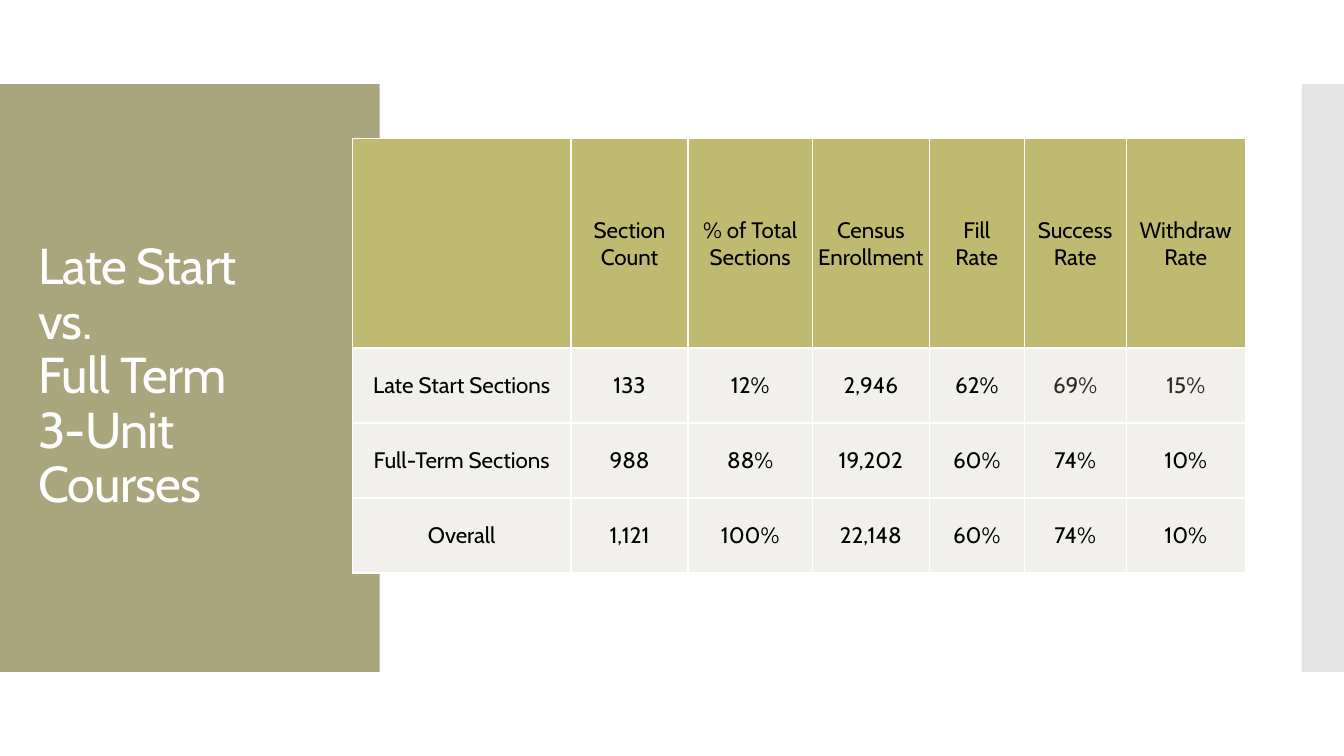
from lxml import etree
from pptx import Presentation
from pptx.dml.color import RGBColor
from pptx.enum.shapes import MSO_SHAPE
from pptx.enum.text import MSO_ANCHOR, MSO_AUTO_SIZE, PP_ALIGN
from pptx.oxml.ns import qn
from pptx.util import Cm, Pt

RECTANGLE = MSO_SHAPE.RECTANGLE
MIDDLE = MSO_ANCHOR.MIDDLE
NO_AUTOFIT = MSO_AUTO_SIZE.NONE
LEFT, CENTER = PP_ALIGN.LEFT, PP_ALIGN.CENTER

FONT = "Cabin"
COLORS = {
    "panel": "A9A57C",
    "strip": "C8C8C8",
    "header": "C0BA71",
    "body": "F1F0EC",
    "white": "FFFFFF",
    "text": "000000",
    "late_rate": "2F2B20",
}
TITLE = "Late Start\vvs.\vFull Term\v3-Unit Courses"
ROWS = [
    ["", "Section Count", "% of Total Sections", "Census\nEnrollment",
     "Fill\nRate", "Success\nRate", "Withdraw Rate"],
    ["Late Start Sections", "133", "12%", "2,946", "62%", "69%", "15%"],
    ["Full-Term Sections", "988", "88%", "19,202", "60%", "74%", "10%"],
    ["Overall", "1,121", "100%", "22,148", "60%", "74%", "10%"],
]
COLUMN_WIDTHS = [5.51, 2.95, 3.13, 2.95, 2.39, 2.57, 3.0]
HEADER_HEIGHT, ROW_HEIGHT = 5.28, 1.89
LATE_RATE_CELLS = {(1, 5), (1, 6)}


def rgb(name):
    return RGBColor.from_string(COLORS[name])


def format_paragraph(paragraph, size, color, alignment):
    paragraph.alignment = alignment
    paragraph.font.name = FONT
    paragraph.font.size = Pt(size)
    paragraph.font.color.rgb = rgb(color)


def add_panel(slide, left, width, color, opacity=100):
    panel = slide.shapes.add_shape(
        RECTANGLE, Cm(left), Cm(2.12), Cm(width), Cm(14.81))
    panel.shadow.inherit = False
    panel.line.fill.background()
    panel.fill.solid()
    panel.fill.fore_color.rgb = rgb(color)
    if opacity < 100:
        fill_color = panel.element.spPr.find(qn("a:solidFill"))[0]
        etree.SubElement(fill_color, qn("a:alpha"), val=str(opacity * 1000))
    slide.shapes.title.element.addprevious(panel.element)


def format_title(title):
    title.left, title.top = Cm(0.71), Cm(3.12)
    title.width, title.height = Cm(8.18), Cm(12.78)
    frame = title.text_frame
    frame.text = TITLE
    frame.word_wrap = True
    frame.auto_size = NO_AUTOFIT
    frame.vertical_anchor = MIDDLE
    paragraph = frame.paragraphs[0]
    format_paragraph(paragraph, 36, "white", LEFT)
    paragraph.line_spacing = 0.9
    paragraph.font.bold = False
    paragraph._p.pPr.find(qn("a:defRPr")).set("spc", "-60")


def add_borders(cell):
    properties = cell._tc.get_or_add_tcPr()
    for side in ("a:lnL", "a:lnR", "a:lnT", "a:lnB"):
        line = etree.SubElement(properties, qn(side), w=str(Pt(1)))
        fill = etree.SubElement(line, qn("a:solidFill"))
        etree.SubElement(fill, qn("a:srgbClr"), val=COLORS["white"])


def format_cell(cell, text, fill, color):
    add_borders(cell)
    cell.fill.solid()
    cell.fill.fore_color.rgb = rgb(fill)
    cell.vertical_anchor = MIDDLE
    cell.margin_left = cell.margin_right = cell.margin_top = Cm(0.02)
    cell.margin_bottom = 0
    cell.text = text
    for paragraph in cell.text_frame.paragraphs:
        format_paragraph(paragraph, 16, color, CENTER)


def add_rate_table(slide):
    heights = [HEADER_HEIGHT] + [ROW_HEIGHT] * (len(ROWS) - 1)
    table = slide.shapes.add_table(
        len(ROWS), len(COLUMN_WIDTHS), Cm(8.88), Cm(3.49),
        Cm(sum(COLUMN_WIDTHS)), Cm(sum(heights))).table
    table.first_row = False
    table.horz_banding = False
    for column, width in zip(table.columns, COLUMN_WIDTHS):
        column.width = Cm(width)
    for row, height in zip(table.rows, heights):
        row.height = Cm(height)
    for row_index, values in enumerate(ROWS):
        fill = "body" if row_index else "header"
        for column_index, text in enumerate(values):
            position = (row_index, column_index)
            color = "late_rate" if position in LATE_RATE_CELLS else "text"
            format_cell(table.cell(*position), text, fill, color)


def main():
    presentation = Presentation()
    presentation.slide_width = Cm(33.87)
    presentation.slide_height = Cm(19.05)
    slide = presentation.slides.add_slide(presentation.slide_layouts[5])
    add_panel(slide, 0, 9.57, "panel")
    add_panel(slide, 32.81, 1.06, "strip", opacity=50)
    format_title(slide.shapes.title)
    add_rate_table(slide)
    presentation.save("out.pptx")


if __name__ == "__main__":
    main()
